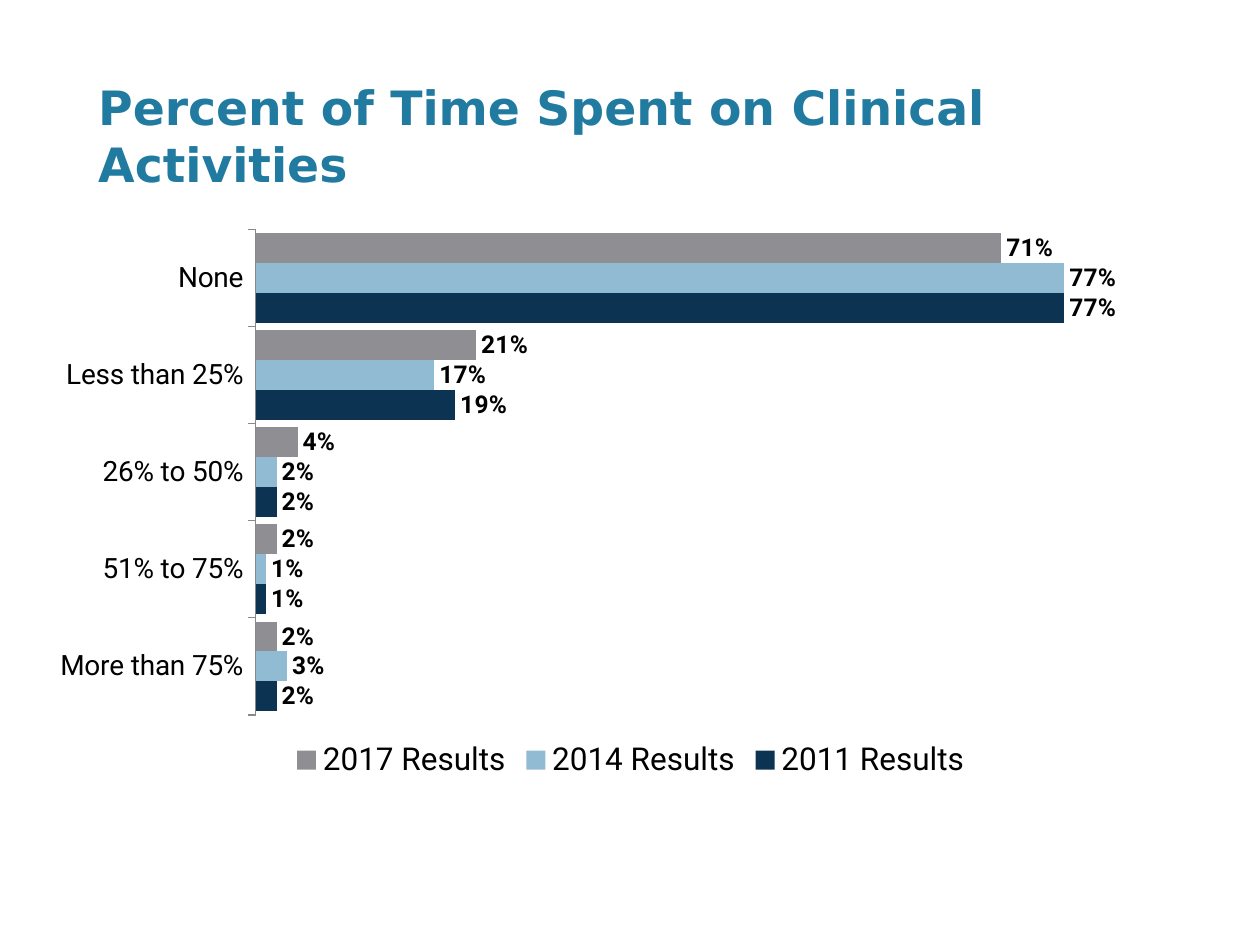
import pptx
import pptx.chart.data
import pptx.dml.color
import pptx.enum.chart
import pptx.enum.text
import pptx.util
from pptx.util import Inches

COLORS = {
    "title": "217AA0",
    "text": "000000",
    "axis": "888888",
    "2011 Results": "0C3351",
    "2014 Results": "91BAD3",
    "2017 Results": "8F8F93",
}
CATEGORIES = ["More than 75%", "51% to 75%", "26% to 50%", "Less than 25%", "None"]
RESULTS = {
    "2011 Results": [0.02, 0.01, 0.02, 0.19, 0.77],
    "2014 Results": [0.03, 0.01, 0.02, 0.17, 0.77],
    "2017 Results": [0.02, 0.02, 0.04, 0.21, 0.71],
}


def rgb(name):
    return pptx.dml.color.RGBColor.from_string(COLORS[name])


def style_font(font, size, color="text", bold=False, face="Roboto"):
    font.name = face
    font.size = pptx.util.Pt(size)
    font.bold = bold
    font.color.rgb = rgb(color)


def add_title(page, text):
    box = page.shapes.add_textbox(Inches(0.78), Inches(0.63), Inches(9.07), Inches(0.88))
    frame = box.text_frame
    frame.word_wrap = True
    frame.vertical_anchor = pptx.enum.text.MSO_ANCHOR.MIDDLE
    frame.margin_left = 0
    frame.margin_right = Inches(0.1)
    frame.margin_top = frame.margin_bottom = Inches(0.05)
    paragraph = frame.paragraphs[0]
    paragraph.text = text
    style_font(paragraph.font, 27, "title", True, "DejaVu Sans")


def style_axes(chart):
    category_axis = chart.category_axis
    category_axis.major_tick_mark = pptx.enum.chart.XL_TICK_MARK.OUTSIDE
    category_axis.format.line.color.rgb = rgb("axis")
    category_axis.format.line.width = pptx.util.Pt(0.75)
    style_font(category_axis.tick_labels.font, 16)
    value_axis = chart.value_axis
    value_axis.visible = False
    value_axis.has_major_gridlines = False
    value_axis.minimum_scale = 0
    value_axis.maximum_scale = 0.9
    value_axis.tick_labels.number_format = "0%"
    value_axis.tick_labels.number_format_is_linked = False


def style_series(series):
    series.format.fill.solid()
    series.format.fill.fore_color.rgb = rgb(series.name)
    series.invert_if_negative = False
    labels = series.data_labels
    labels.show_value = True
    labels.number_format = "0%"
    labels.number_format_is_linked = False
    labels.position = pptx.enum.chart.XL_LABEL_POSITION.OUTSIDE_END
    style_font(labels.font, 14, bold=True)


def add_results_chart(page):
    data = pptx.chart.data.CategoryChartData(number_format="0%")
    data.categories = CATEGORIES
    for name, values in RESULTS.items():
        data.add_series(name, values)
    chart = page.shapes.add_chart(
        pptx.enum.chart.XL_CHART_TYPE.BAR_CLUSTERED,
        Inches(0.29), Inches(1.73), Inches(9.43), Inches(4.5), data,
    ).chart
    style_font(chart.font, 18)
    chart.has_title = False
    chart.has_legend = True
    chart.legend.position = pptx.enum.chart.XL_LEGEND_POSITION.BOTTOM
    chart.legend.include_in_layout = False
    style_font(chart.legend.font, 18)
    style_axes(chart)
    plot = chart.plots[0]
    plot.gap_width = 25
    plot.vary_by_categories = False
    for series in plot.series:
        style_series(series)


def main():
    """Build the slide on time spent on clinical activities."""
    deck = pptx.Presentation()
    deck.slide_width = Inches(10)
    deck.slide_height = Inches(7.5)
    page = deck.slides.add_slide(deck.slide_layouts[6])
    add_title(page, "Percent of Time Spent on Clinical Activities")
    add_results_chart(page)
    deck.save("out.pptx")


if __name__ == "__main__":
    main()
